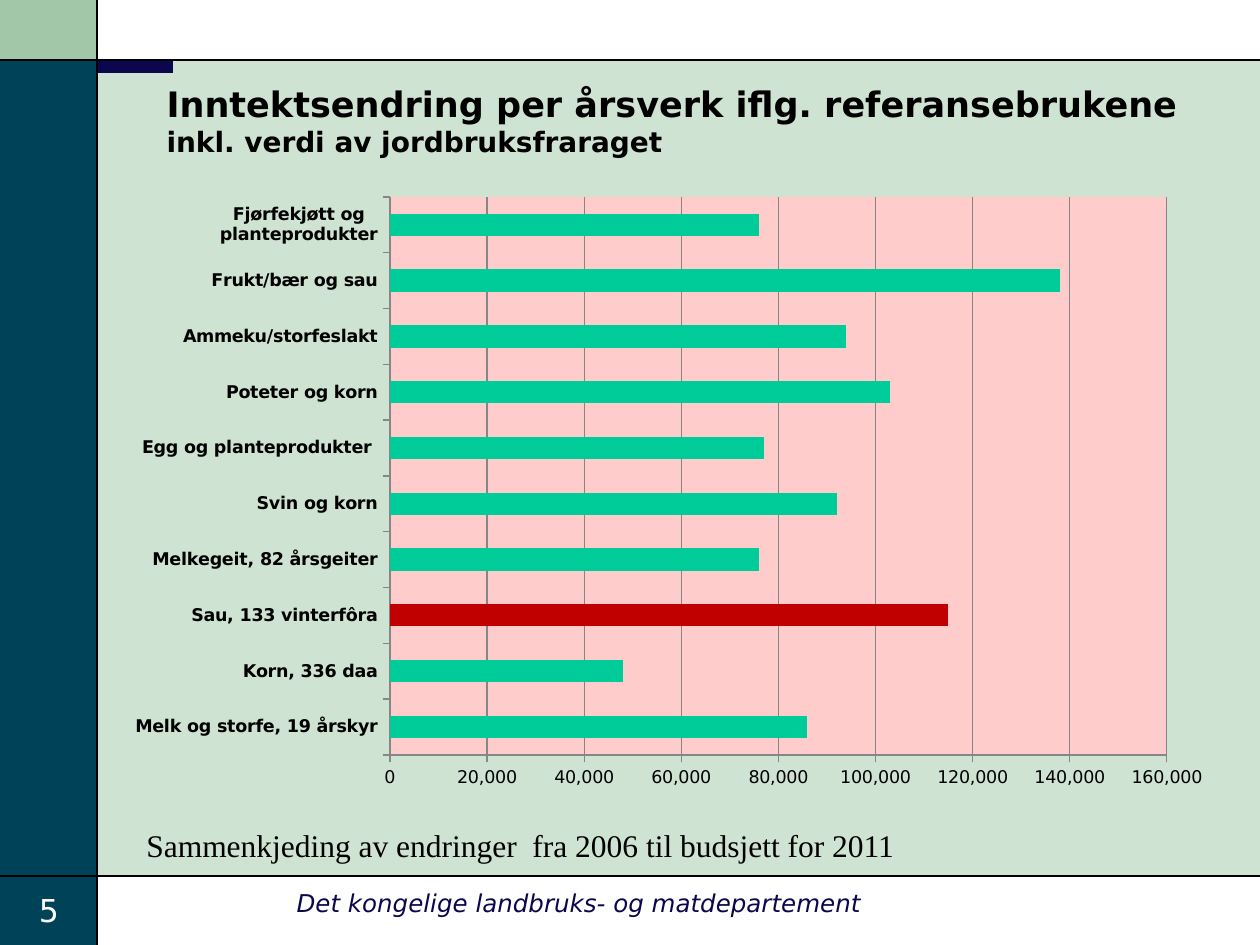
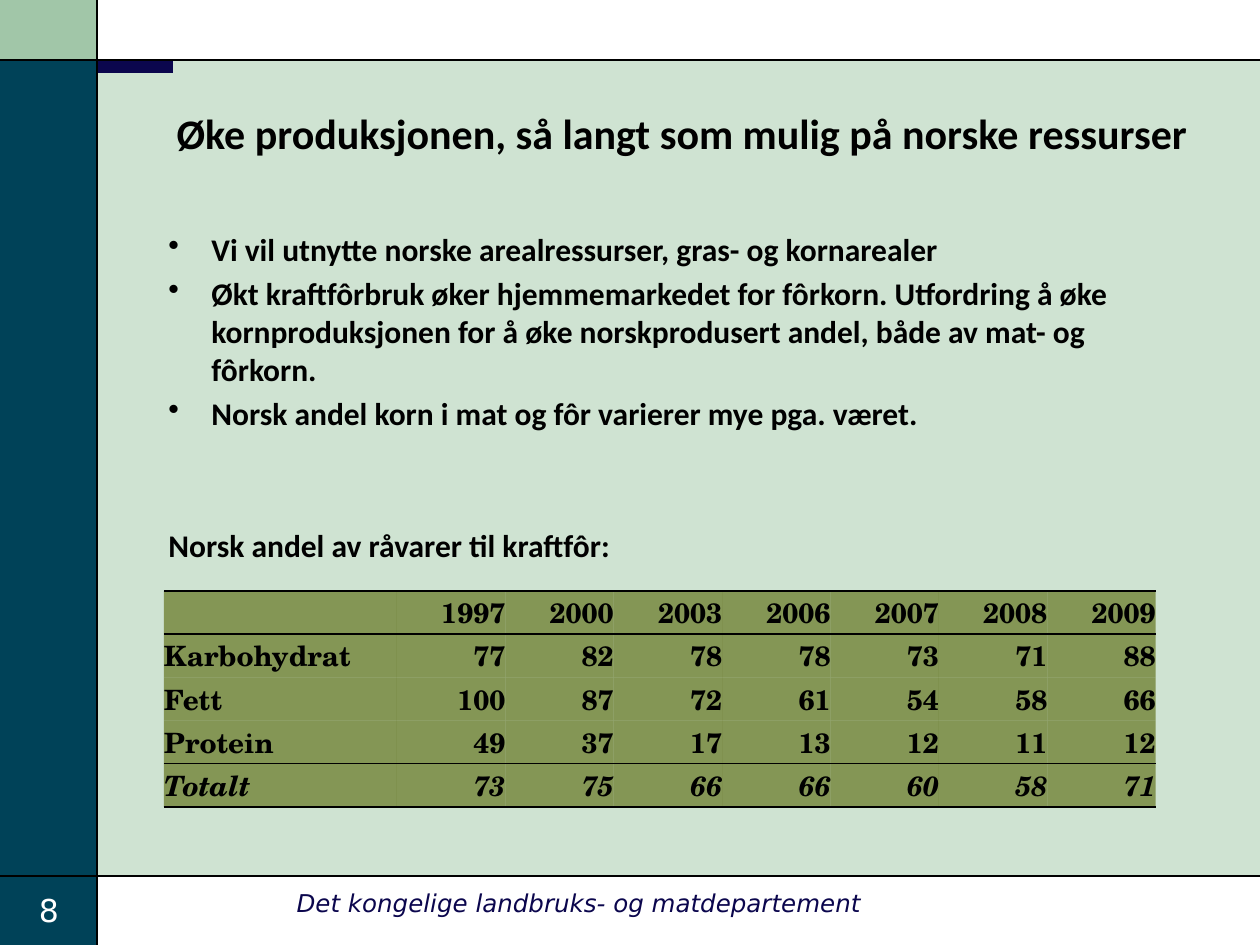
"""Builds two slides on farm income and Norwegian feed ingredients."""
from lxml.etree import SubElement
from pptx import Presentation
from pptx.chart.data import CategoryChartData
from pptx.dml.color import RGBColor
from pptx.enum.chart import XL_CHART_TYPE, XL_TICK_MARK
from pptx.enum.shapes import MSO_CONNECTOR, MSO_SHAPE
from pptx.enum.text import MSO_ANCHOR, MSO_AUTO_SIZE, PP_ALIGN
from pptx.oxml.ns import qn
from pptx.util import Emu, Pt

BLACK = RGBColor(0x00, 0x00, 0x00)
WHITE = RGBColor(0xFF, 0xFF, 0xFF)
NAVY = RGBColor(0x0B, 0x06, 0x4D)
TEAL = RGBColor(0x00, 0x42, 0x58)
SAGE = RGBColor(0xA1, 0xC6, 0xA8)
MINT = RGBColor(0xCF, 0xE3, 0xD2)
PINK = RGBColor(0xFF, 0xCC, 0xCC)
GREEN = RGBColor(0x00, 0xCC, 0x99)
RED = RGBColor(0xC0, 0x00, 0x00)
GREY = RGBColor(0x86, 0x86, 0x86)
OLIVE = RGBColor(0x53, 0x63, 0x03)

SANS, BODY, SERIF, TABLE = "DejaVu Sans", "Calibri", "Times New Roman", "TeX Gyre Schola"
WIDTH, HEIGHT = 1260, 945
SIDE, TOP, BOTTOM = 97, 60, 876

BANDS = [
    (SIDE, TOP, WIDTH - SIDE, BOTTOM - TOP, MINT),
    (0, 0, SIDE, TOP, SAGE),
    (0, TOP, SIDE, HEIGHT - TOP, TEAL),
    (SIDE + 1, TOP + 1, 75, 12, NAVY),
]
RULES = [(SIDE, 0, SIDE, HEIGHT), (0, BOTTOM, WIDTH, BOTTOM), (0, TOP, WIDTH, TOP)]
FOOTER = "Det kongelige landbruks- og matdepartement"

INCOME_TITLE = [
    ("Inntektsendring per årsverk iflg. referansebrukene", 20),
    ("inkl. verdi av jordbruksfraraget", 16),
]
INCOME = [
    ("Melk og storfe, 19 årskyr", 86000),
    ("Korn, 336 daa", 48000),
    ("Sau, 133 vinterfôra", 115000),
    ("Melkegeit, 82 årsgeiter", 76000),
    ("Svin og korn", 92000),
    ("Egg og planteprodukter ", 77000),
    ("Poteter og korn", 103000),
    ("Ammeku/storfeslakt", 94000),
    ("Frukt/bær og sau", 138000),
    ("Fjørfekjøtt og planteprodukter", 76000),
]
HIGHLIGHT = 2
CHART_BOX = (115, 185, 1111, 615)
PLOT_BOX = (390, 197, 777, 558)
INCOME_NOTE = "Sammenkjeding av endringer  fra 2006 til budsjett for 2011"

FEED_TITLE = [("Øke produksjonen, så langt som mulig på norske ressurser", 24)]
FEED_POINTS = [
    "Vi vil utnytte norske arealressurser, gras- og kornarealer",
    "Økt kraftfôrbruk øker hjemmemarkedet for fôrkorn. Utfordring å øke "
    "kornproduksjonen for å øke norskprodusert andel, både av mat- og fôrkorn.",
    "Norsk andel korn i mat og fôr varierer mye pga. været.",
]
FEED_CAPTION = "Norsk andel av råvarer til kraftfôr:"
FEED_ROWS = [
    ("", 1997, 2000, 2003, 2006, 2007, 2008, 2009),
    ("Karbohydrat", 77, 82, 78, 78, 73, 71, 88),
    ("Fett", 100, 87, 72, 61, 54, 58, 66),
    ("Protein", 49, 37, 17, 13, 12, 11, 12),
    ("Totalt", 73, 75, 66, 66, 60, 58, 71),
]
RULED_EDGES = {0, 1, 4, 5}
TABLE_BOX = (164, 591, 992, 216)
LABEL_WIDTH = 233


def px(length):
    return Emu(round(length * 914400 / 126))


def place(*lengths):
    return [px(length) for length in lengths]


def style(font, name, size, color=BLACK, bold=False, italic=False):
    font.name, font.size, font.bold, font.italic = name, Pt(size), bold, italic
    font.color.rgb = color


def add_text(page, box, text, name, size, color=BLACK, align=PP_ALIGN.LEFT,
             italic=False, wrap=True):
    frame = page.shapes.add_textbox(*place(*box)).text_frame
    frame.word_wrap = wrap
    frame.vertical_anchor = MSO_ANCHOR.MIDDLE
    para = frame.paragraphs[0]
    para.text, para.alignment = text, align
    style(para.font, name, size, color, italic=italic)


def add_page(deck, number, title_lines, title_box, title_font):
    page = deck.slides.add_slide(deck.slide_layouts[5])
    for *box, color in BANDS:
        band = page.shapes.add_shape(MSO_SHAPE.RECTANGLE, *place(*box))
        band.shadow.inherit = False
        band.fill.solid()
        band.fill.fore_color.rgb = color
        band.line.fill.background()
    for ends in RULES:
        rule = page.shapes.add_connector(MSO_CONNECTOR.STRAIGHT, *place(*ends))
        rule.line.color.rgb, rule.line.width = BLACK, Pt(0.75)
        SubElement(rule.element.spPr, qn("a:effectLst"))
    add_text(page, (0, 885, 98, 50), str(number), SANS, 18, WHITE, PP_ALIGN.CENTER)
    add_text(page, (121, 882, 916, 42), FOOTER, SANS, 14, NAVY, PP_ALIGN.CENTER, True)

    title = page.shapes.title
    page.shapes.element.append(title.element)
    title.left, title.top, title.width, title.height = place(*title_box)
    frame = title.text_frame
    frame.auto_size = MSO_AUTO_SIZE.NONE
    frame.vertical_anchor = MSO_ANCHOR.MIDDLE
    para = frame.paragraphs[0]
    para.alignment = PP_ALIGN.LEFT
    for index, (text, size) in enumerate(title_lines):
        if index:
            para.add_line_break()
        span = para.add_run()
        span.text = text
        style(span.font, title_font, size, bold=True)
    return page


def set_plot_area(chart):
    plot_area = chart.element.find(".//" + qn("c:plotArea"))
    layout = plot_area.find(qn("c:layout"))
    if layout is None:
        layout = SubElement(plot_area, qn("c:layout"))
        plot_area.insert(0, layout)
    manual = SubElement(layout, qn("c:manualLayout"))
    left, top, width, height = CHART_BOX
    plot_left, plot_top, plot_width, plot_height = PLOT_BOX
    settings = [
        ("layoutTarget", "inner"), ("xMode", "edge"), ("yMode", "edge"),
        ("x", (plot_left - left) / width), ("y", (plot_top - top) / height),
        ("w", plot_width / width), ("h", plot_height / height),
    ]
    for tag, value in settings:
        SubElement(manual, qn("c:" + tag), val=str(value))
    shape_format = SubElement(plot_area, qn("c:spPr"))
    fill = SubElement(shape_format, qn("a:solidFill"))
    SubElement(fill, qn("a:srgbClr"), val=str(PINK))


def add_income_chart(page):
    data = CategoryChartData(number_format="#,##0")
    data.categories = [name for name, _ in INCOME]
    data.add_series("Series 1", [value for _, value in INCOME])
    chart = page.shapes.add_chart(
        XL_CHART_TYPE.BAR_CLUSTERED, *place(*CHART_BOX), data).chart
    chart.has_title = chart.has_legend = False
    style(chart.font, SANS, 10)
    plot = chart.plots[0]
    plot.vary_by_categories, plot.gap_width = False, 150
    bars = plot.series[0]
    for fill, color in ((bars.format.fill, GREEN),
                        (bars.points[HIGHLIGHT].format.fill, RED)):
        fill.solid()
        fill.fore_color.rgb = color
    for axis in (chart.category_axis, chart.value_axis):
        axis.major_tick_mark = XL_TICK_MARK.OUTSIDE
        axis.format.line.color.rgb = GREY
    style(chart.category_axis.tick_labels.font, SANS, 10, bold=True)
    values = chart.value_axis
    values.minimum_scale, values.maximum_scale, values.major_unit = 0, 160000, 20000
    values.major_gridlines.format.line.color.rgb = GREY
    values.tick_labels.number_format = "#,##0"
    values.tick_labels.number_format_is_linked = False
    set_plot_area(chart)


def add_feed_points(page):
    frame = page.shapes.add_textbox(*place(156, 224, 1050, 367)).text_frame
    frame.word_wrap = True
    for index, text in enumerate(FEED_POINTS + [FEED_CAPTION]):
        para = frame.add_paragraph() if index else frame.paragraphs[0]
        para.text = text
        style(para.font, BODY, 18, bold=True)
        if text == FEED_CAPTION:
            para.space_before = Pt(54)
            continue
        para.space_before = Pt(3.6)
        properties = para.font._element.getparent()
        properties.set("marL", str(px(43)))
        properties.set("indent", str(-px(43)))
        bullet = properties.makeelement(qn("a:buChar"), char="•")
        properties.insert(properties.index(para.font._element), bullet)


def format_cell(cell, row):
    properties = cell._tc.get_or_add_tcPr()
    edges = (("lnL", False), ("lnR", False),
             ("lnT", row in RULED_EDGES), ("lnB", row + 1 in RULED_EDGES))
    for tag, ruled in edges:
        line = SubElement(properties, qn("a:" + tag), w=str(Pt(1)))
        fill = SubElement(line, qn("a:solidFill" if ruled else "a:noFill"))
        if ruled:
            SubElement(fill, qn("a:srgbClr"), val=str(BLACK))
    cell.fill.solid()
    cell.fill.fore_color.rgb = OLIVE
    SubElement(properties.find(".//" + qn("a:solidFill") + "/" + qn("a:srgbClr")
                               + "[@val='" + str(OLIVE) + "']"),
               qn("a:alpha"), val="60000")
    cell.margin_left = cell.margin_right = cell.margin_top = cell.margin_bottom = 0
    cell.vertical_anchor = MSO_ANCHOR.MIDDLE


def add_feed_table(page):
    row_count, column_count = len(FEED_ROWS), len(FEED_ROWS[0])
    table = page.shapes.add_table(row_count, column_count, *place(*TABLE_BOX)).table
    table.first_row = table.horz_banding = False
    year_width = (TABLE_BOX[2] - LABEL_WIDTH) / (column_count - 1)
    for index, column in enumerate(table.columns):
        column.width = px(year_width if index else LABEL_WIDTH)
    for row, values in enumerate(FEED_ROWS):
        table.rows[row].height = px(TABLE_BOX[3] / row_count)
        for index, value in enumerate(values):
            cell = table.cell(row, index)
            format_cell(cell, row)
            para = cell.text_frame.paragraphs[0]
            para.text = str(value)
            para.alignment = PP_ALIGN.RIGHT if index else PP_ALIGN.LEFT
            style(para.font, TABLE, 16, bold=True, italic=row == row_count - 1)


def main():
    deck = Presentation()
    deck.slide_width, deck.slide_height = place(WIDTH, HEIGHT)

    income = add_page(deck, 5, INCOME_TITLE, (154, 76, 1046, 89), SANS)
    add_income_chart(income)
    add_text(income, (134, 820, 781, 50), INCOME_NOTE, SERIF, 18, wrap=False)

    feed = add_page(deck, 8, FEED_TITLE, (164, 96, 1046, 73), BODY)
    add_feed_points(feed)
    add_feed_table(feed)

    deck.save("out.pptx")


if __name__ == "__main__":
    main()
